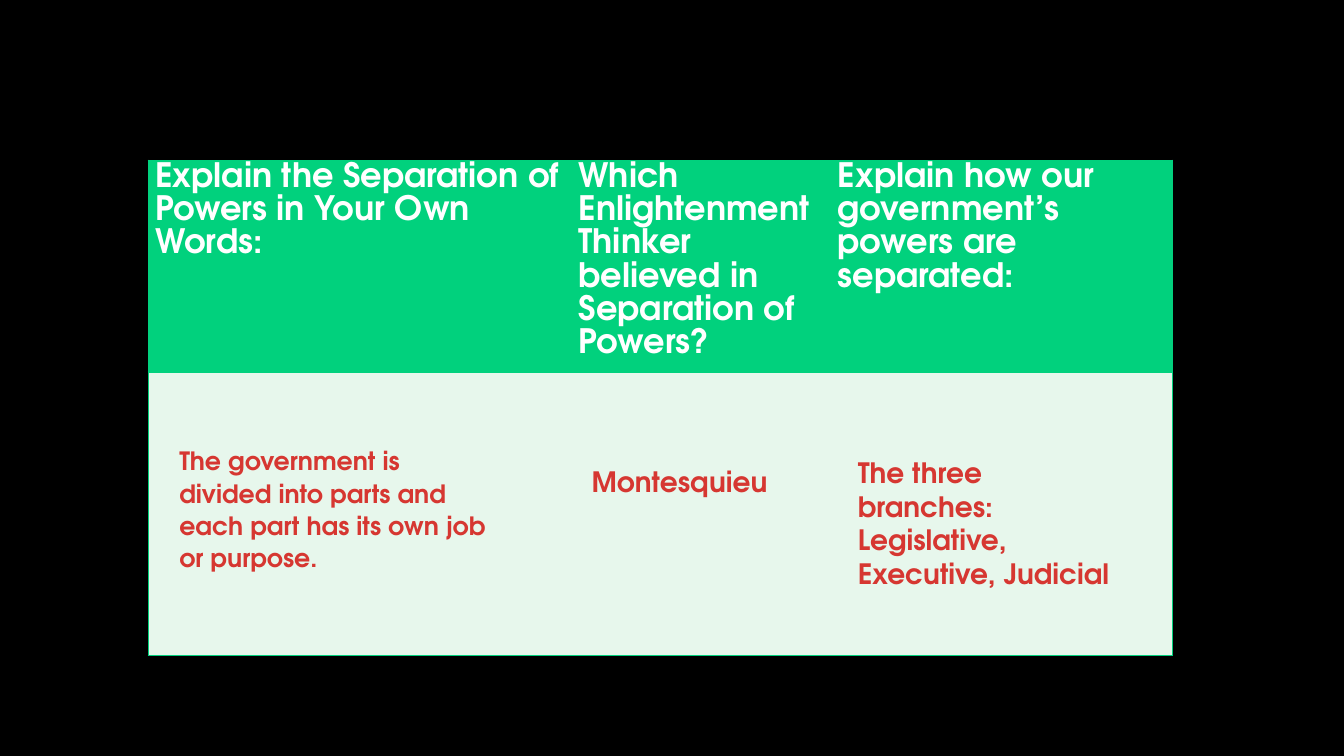
from lxml import etree
from pptx import Presentation
from pptx.dml.color import RGBColor
from pptx.enum import text
from pptx.oxml.ns import qn
from pptx.util import Inches, Pt

FONT = "TeX Gyre Adventor"
GREEN, MINT, RED, WHITE = "01D17D", "E7F7EC", "D63731", "FFFFFF"
QUESTIONS = [
    "Explain the Separation of Powers in Your Own Words:",
    "Which Enlightenment Thinker believed in Separation of Powers?",
    "Explain how our government’s powers are separated:",
]
COLUMN_WIDTHS = [4.2, 2.57, 3.39]
ROW_HEIGHTS = [2.1, 2.81]


def color(value):
    return RGBColor.from_string(value)


def style(paragraph, size, value, spacing=None):
    paragraph.line_spacing = spacing
    for run in paragraph.runs:
        run.font.name = FONT
        run.font.size = Pt(size)
        run.font.bold = True
        run.font.color.rgb = color(value)


def set_borders(cell, visible):
    """Outline the visible sides in green and clear the others."""
    properties = cell._tc.get_or_add_tcPr()
    for position, side in enumerate("LRTB"):
        line = etree.Element(qn("a:ln" + side), w=str(Pt(1)))
        if side in visible:
            fill = etree.SubElement(line, qn("a:solidFill"))
            etree.SubElement(fill, qn("a:srgbClr"), val=GREEN)
        else:
            etree.SubElement(line, qn("a:noFill"))
        properties.insert(position, line)


def add_question_table(slide):
    frame = slide.shapes.add_table(
        len(ROW_HEIGHTS), len(COLUMN_WIDTHS), Inches(1.47), Inches(1.59),
        Inches(sum(COLUMN_WIDTHS)), Inches(sum(ROW_HEIGHTS)))
    table = frame.table
    for column, width in zip(table.columns, COLUMN_WIDTHS):
        column.width = Inches(width)
    for row, height in zip(table.rows, ROW_HEIGHTS):
        row.height = Inches(height)

    for row_number, fill in enumerate([GREEN, MINT]):
        for column_number, sides in enumerate(["LTB", "TB", "TBR"]):
            cell = table.cell(row_number, column_number)
            cell.margin_left = cell.margin_right = Inches(0.07)
            cell.margin_top = cell.margin_bottom = 0
            cell.fill.solid()
            cell.fill.fore_color.rgb = color(fill)
            set_borders(cell, sides)

    for cell, question in zip(table.rows[0].cells, QUESTIONS):
        cell.text_frame.text = question
        style(cell.text_frame.paragraphs[0], 24, WHITE, 1.07)


def add_answer(slide, answer, left, top, width, height, size, spacing=None):
    box = slide.shapes.add_textbox(
        Inches(left), Inches(top), Inches(width), Inches(height))
    frame = box.text_frame
    frame.word_wrap = True
    frame.auto_size = text.MSO_AUTO_SIZE.SHAPE_TO_FIT_TEXT
    frame.text = answer
    style(frame.paragraphs[0], size, RED, spacing)


def main():
    deck = Presentation()
    deck.slide_width, deck.slide_height = Inches(13.33), Inches(7.5)
    slide = deck.slides.add_slide(deck.slide_layouts[6])
    slide.background.fill.solid()
    slide.background.fill.fore_color.rgb = color("000000")

    # Questions above, with an empty row for the answers
    add_question_table(slide)

    # Answers
    add_answer(slide, "The government is divided into parts and each part "
               "has its own job or purpose.", 1.68, 4.35, 3.33, 1.7, 18, 1.07)
    add_answer(slide, "Montesquieu", 5.77, 4.56, 2.42, 0.44, 20)
    add_answer(slide, "The three branches: Legislative, Executive, Judicial",
               8.41, 4.47, 2.71, 1.78, 20)

    deck.save("out.pptx")


if __name__ == "__main__":
    main()
